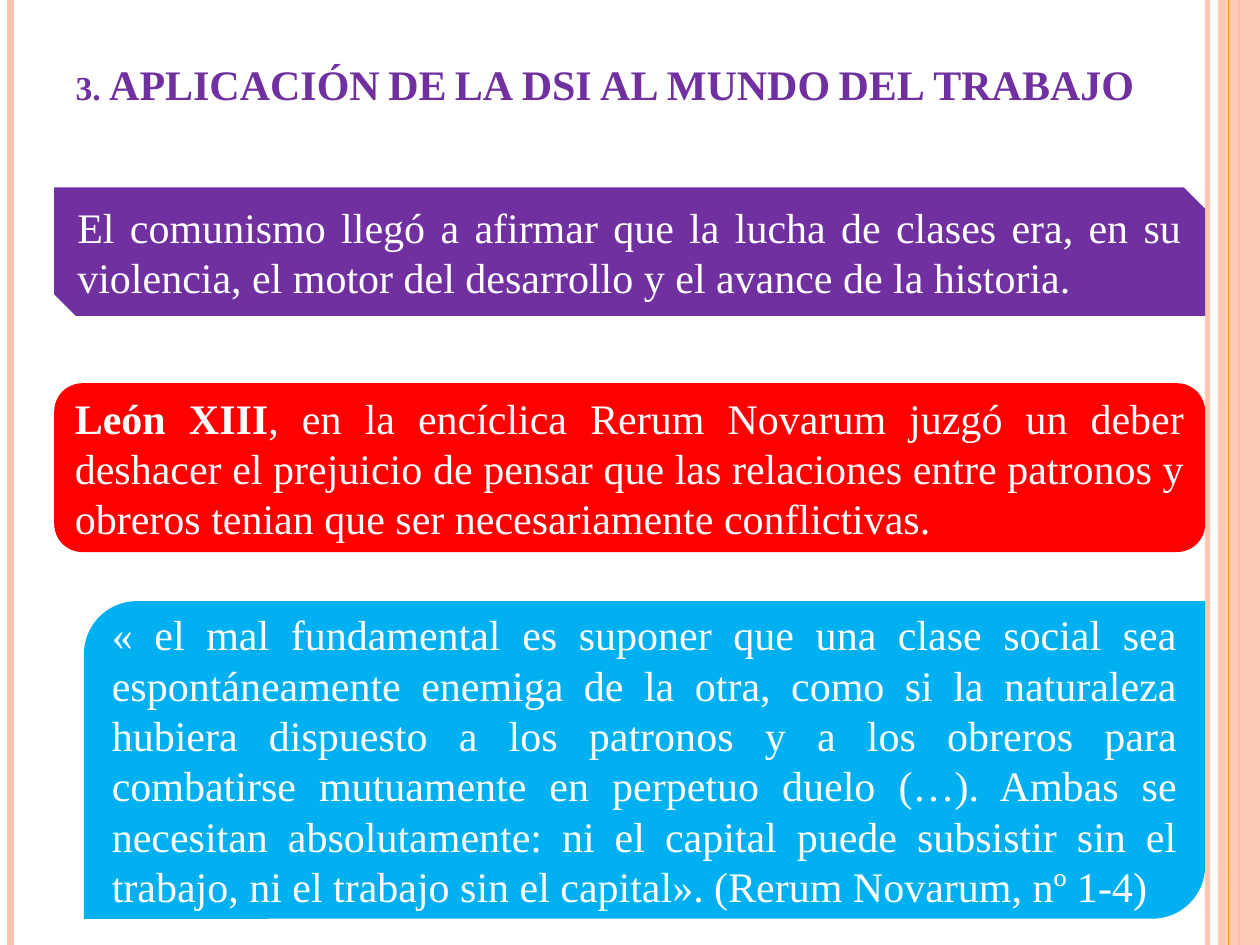
"""Build the slide on applying the DSI to the world of work."""
from lxml.etree import SubElement
from pptx import Presentation
from pptx.dml.color import RGBColor
from pptx.enum.shapes import MSO_CONNECTOR, MSO_SHAPE as SHAPE
from pptx.enum.text import MSO_ANCHOR, MSO_AUTO_SIZE, PP_ALIGN
from pptx.oxml.ns import qn
from pptx.util import Pt

PURPLE = RGBColor(0x70, 0x30, 0xA0)
RED = RGBColor(0xFF, 0x00, 0x00)
BLUE = RGBColor(0x00, 0xB0, 0xF0)
WHITE = RGBColor(0xFF, 0xFF, 0xFF)
PEACH = RGBColor(0xFE, 0xC3, 0xAE)
ORANGE = RGBColor(0xFE, 0x86, 0x37)

FONT, SIZE = "Times New Roman", Pt(24)
WIDTH, HEIGHT = 720, 540
PANEL_RIGHT = 688.7

HEADING = "3. APLICACIÓN DE LA DSI AL MUNDO DEL TRABAJO"
PANELS = [
    (SHAPE.SNIP_2_DIAG_RECTANGLE, PURPLE, 31, 107, 73.5, "",
     "El comunismo llegó a afirmar que la lucha de clases era, en su violencia, "
     "el motor del desarrollo y el avance de la historia."),
    (SHAPE.FLOWCHART_ALTERNATE_PROCESS, RED, 31, 219, 96.5, "León XIII",
     ", en la encíclica Rerum Novarum juzgó un deber deshacer el prejuicio de "
     "pensar que las relaciones entre patronos y obreros tenian que ser "
     "necesariamente conflictivas."),
    (SHAPE.ROUND_2_DIAG_RECTANGLE, BLUE, 48, 343.5, 181.5, "",
     "« el mal fundamental es suponer que una clase social sea espontáneamente "
     "enemiga de la otra, como si la naturaleza hubiera dispuesto a los patronos "
     "y a los obreros para combatirse mutuamente en perpetuo duelo (…). Ambas se "
     "necesitan absolutamente: ni el capital puede subsistir sin el trabajo, ni "
     "el trabajo sin el capital». (Rerum Novarum, nº 1-4)"),
]
STRIPES_BELOW = [(690, PEACH, 3, 93), (6, PEACH, 4.5, 100), (708, ORANGE, 1.5, 100)]
BAND_LEFT, BAND_OPACITY = 696, 87
STRIPE_ABOVE = (702, ORANGE, 0.75, 100)


def set_opacity(fill, percent):
    color = fill._xPr.find(qn("a:solidFill"))[0]
    SubElement(color, qn("a:alpha")).set("val", str(percent * 1000))


def add_stripe(slide, x, color, weight, opacity):
    stripe = slide.shapes.add_connector(
        MSO_CONNECTOR.STRAIGHT, Pt(x), Pt(0), Pt(x), Pt(HEIGHT))
    stripe.line.color.rgb = color
    stripe.line.width = Pt(weight)
    if opacity < 100:
        set_opacity(stripe.line.fill, opacity)
    SubElement(stripe._element.spPr, qn("a:effectLst"))


def add_block(slide, kind, color, left, top, width, height):
    block = slide.shapes.add_shape(kind, Pt(left), Pt(top), Pt(width), Pt(height))
    block.shadow.inherit = False
    block.fill.solid()
    block.fill.fore_color.rgb = color
    block.line.fill.background()
    return block


def format_font(font, color):
    font.name, font.size, font.color.rgb = FONT, SIZE, color


def add_panel(slide, kind, color, left, top, height, lead, body):
    panel = add_block(slide, kind, color, left, top, PANEL_RIGHT - left, height)
    frame = panel.text_frame
    frame.word_wrap = True
    frame.vertical_anchor = MSO_ANCHOR.MIDDLE
    paragraph = frame.paragraphs[0]
    paragraph.alignment = PP_ALIGN.JUSTIFY
    format_font(paragraph.font, WHITE)
    if lead:
        lead_run = paragraph.add_run()
        lead_run.text = lead
        lead_run.font.bold = True
    paragraph.add_run().text = body


def fill_title(title):
    title.left, title.top, title.width, title.height = Pt(36), Pt(21.6), Pt(636), Pt(44)
    frame = title.text_frame
    frame.text = HEADING
    frame.auto_size = MSO_AUTO_SIZE.NONE
    frame.vertical_anchor = MSO_ANCHOR.BOTTOM
    paragraph = frame.paragraphs[0]
    paragraph.alignment = PP_ALIGN.LEFT
    format_font(paragraph.font, PURPLE)
    paragraph.font.bold = True
    paragraph.runs[0]._r.get_or_add_rPr().set("cap", "small")


def main():
    deck = Presentation()
    deck.slide_width, deck.slide_height = Pt(WIDTH), Pt(HEIGHT)
    slide = deck.slides.add_slide(deck.slide_layouts[5])
    for stripe in STRIPES_BELOW:
        add_stripe(slide, *stripe)
    band = add_block(slide, SHAPE.RECTANGLE, PEACH, BAND_LEFT, 0, WIDTH - BAND_LEFT, HEIGHT)
    set_opacity(band.fill, BAND_OPACITY)
    add_stripe(slide, *STRIPE_ABOVE)
    fill_title(slide.shapes.title)
    for panel in PANELS:
        add_panel(slide, *panel)
    deck.save("out.pptx")


if __name__ == "__main__":
    main()
